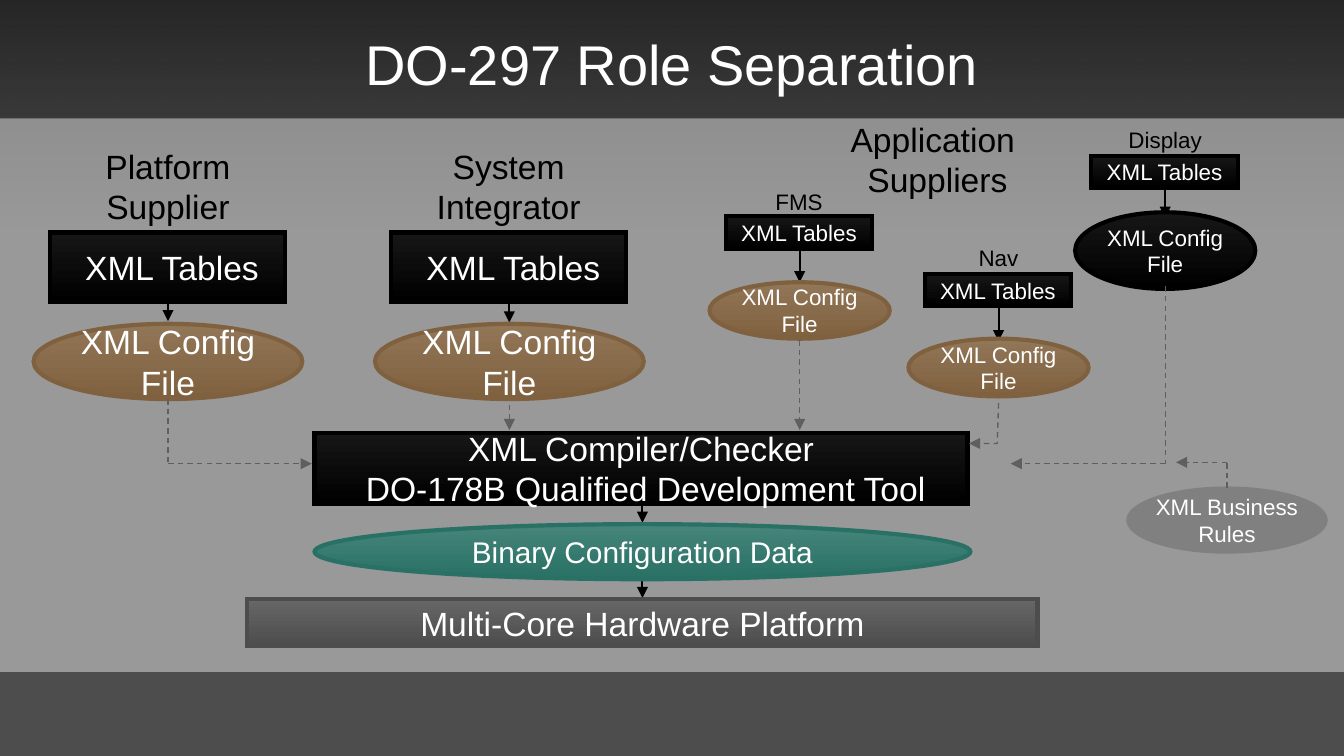
"""Build the DO-297 role separation slide."""
from lxml import etree
from pptx import Presentation
from pptx.dml.color import RGBColor
from pptx.enum.dml import MSO_LINE
from pptx.enum.shapes import MSO_CONNECTOR, MSO_SHAPE
from pptx.enum.text import MSO_ANCHOR, PP_ALIGN
from pptx.oxml.ns import qn
from pptx.util import Inches, Pt

RECT, OVAL = MSO_SHAPE.RECTANGLE, MSO_SHAPE.OVAL
STRAIGHT, DASH = MSO_CONNECTOR.STRAIGHT, MSO_LINE.DASH
MIDDLE, CENTER = MSO_ANCHOR.MIDDLE, PP_ALIGN.CENTER
hex_color = RGBColor.from_string

BLACK = ("161616", "000000")
BROWN = ("917657", "80613F")
GREEN = ("46857B", "297065")
GRAY = ("666666", "4D4D4D")


def write(shape, text, size, color, insets=(0, 0), wrap=True):
    """Put centred text in a shape."""
    frame = shape.text_frame
    frame.text = text
    frame.word_wrap = wrap
    frame.vertical_anchor = MIDDLE
    frame.margin_left = frame.margin_right = Inches(insets[0])
    frame.margin_top = frame.margin_bottom = Inches(insets[1])
    for para in frame.paragraphs:
        para.alignment = CENTER
        para.font.size = Pt(size)
        para.font.name = "Arial"
        para.font.color.rgb = hex_color(color)


def style_line(shape, dashed, arrow=True):
    """Format a flow line, dashed gray or solid black."""
    line = shape.line
    line.color.rgb = hex_color("5F5F5F" if dashed else "000000")
    line.width = Pt(0.75 if dashed else 1)
    if dashed:
        line.dash_style = DASH
    properties = shape._element.spPr
    if arrow:
        etree.SubElement(properties.find(qn("a:ln")), qn("a:tailEnd"), type="triangle")
    if properties.find(qn("a:effectLst")) is None:
        etree.SubElement(properties, qn("a:effectLst"))


deck = Presentation()
deck.slide_width = Inches(10)
deck.slide_height = deck.slide_width * 9 // 16
page = deck.slides.add_slide(deck.slide_layouts[5])
shapes = page.shapes
page.background.fill.solid()
page.background.fill.fore_color.rgb = hex_color("4D4D4D")

banner = shapes.add_shape(RECT, 0, 0, Inches(10), Inches(1.74))
banner.fill.gradient()
banner.fill.gradient_angle = 90
for stop in banner.fill.gradient_stops:
    stop.color.rgb = hex_color("262626")
panel = shapes.add_shape(RECT, 0, Inches(0.88), Inches(10), Inches(4.12))
panel.fill.solid()
panel.fill.fore_color.rgb = hex_color("E6E6E6")
for shape, opacity in ((banner, "0"), (panel, "50000")):
    shape.shadow.inherit = False
    shape.line.fill.background()
    color = next(shape._element.spPr.iter(qn("a:srgbClr")))
    etree.SubElement(color, qn("a:alpha"), val=opacity)

title = shapes.title
title.left, title.top, title.width, title.height = map(Inches, (0.5, 0.24, 9, 0.53))
write(title, "DO-297 Role Separation", 30, "FFFFFF", (0.1, 0.05))
title.text_frame.paragraphs[0].line_spacing = 0.85
panel._element.addnext(title._element)

for x, top, bottom in (
    (1.25, 2.24, 2.39), (3.79, 2.24, 2.4), (5.95, 1.85, 2.1), (7.43, 2.28, 2.54),
    (8.67, 1.37, 1.62), (4.78, 3.76, 3.89), (4.78, 4.32, 4.45),
):
    arrow = shapes.add_connector(STRAIGHT, *map(Inches, (x, top, x, bottom)))
    style_line(arrow, dashed=False)

boxes = [
    (RECT, (1.84, 4.46, 5.88, 0.35), GRAY, "Multi-Core Hardware Platform", 18, (0.1, 0.05), True),
    (RECT, (2.34, 3.22, 4.86, 0.53), BLACK,
     "XML Compiler/Checker\v DO-178B Qualified Development Tool", 18, (0.1, 0.05), False),
    (OVAL, (2.34, 3.9, 4.88, 0.41), GREEN, "Binary Configuration Data", 16, (0, 0), True),
]
for center in (1.25, 3.79):
    boxes += [
        (RECT, (center - 0.88, 1.73, 1.75, 0.52), BLACK, " XML Tables", 18, (0.1, 0.05), False),
        (OVAL, (center - 1, 2.41, 2, 0.56), BROWN, "XML Config\vFile", 18, (0, 0), True),
    ]
for center, table_top, file_top, file_height, colors in (
    (5.95, 1.61, 2.1, 0.42, BROWN), (7.43, 2.04, 2.52, 0.43, BROWN), (8.67, 1.16, 1.58, 0.57, BLACK),
):
    boxes += [
        (RECT, (center - 0.55, table_top, 1.09, 0.24), BLACK, "XML Tables", 12, (0, 0.02), True),
        (OVAL, (center - 0.67, file_top, 1.34, file_height), colors, "XML Config File", 12, (0, 0), True),
    ]
for kind, place, colors, text, size, insets, wrap in boxes:
    box = shapes.add_shape(kind, *map(Inches, place))
    box.shadow.inherit = False
    box.fill.gradient()
    box.fill.gradient_angle = 270
    for stop, color in zip(box.fill.gradient_stops, colors):
        stop.color.rgb = hex_color(color)
    box.line.color.rgb = hex_color(colors[1])
    box.line.width = Pt(2.25)
    etree.SubElement(box._element.spPr.find(qn("a:ln")), qn("a:miter"), lim="800000")
    write(box, text, size, "FFFFFF", insets, wrap)

rules = shapes.add_shape(OVAL, *map(Inches, (8.38, 3.62, 1.5, 0.5)))
rules.shadow.inherit = False
rules.fill.solid()
rules.fill.fore_color.rgb = hex_color("808080")
rules.line.fill.background()
write(rules, "XML Business Rules", 12, "FFFFFF")

for text, place, size in (
    ("Platform\vSupplier", (0.78, 1.08, 0.94, 0.61), 18),
    ("System Integrator", (3, 1.08, 1.57, 0.61), 18),
    ("Application \vSuppliers", (6.13, 0.88, 1.69, 0.61), 18),
    ("FMS", (5.57, 1.4, 0.75, 0.2), 12),
    ("Nav", (6.76, 1.82, 1.34, 0.2), 12),
    ("Display", (8.17, 0.94, 1, 0.2), 12),
):
    write(shapes.add_textbox(*map(Inches, place)), text, size, "000000")

for route in (
    ((1.25, 2.97), (1.25, 3.45), (2.32, 3.45)),
    ((3.79, 3.01), (3.79, 3.2)),
    ((5.95, 2.53), (5.95, 3.2)),
    ((8.67, 2.13), (8.67, 3.45), (7.52, 3.45)),
    ((9.13, 3.63), (9.13, 3.44), (8.75, 3.44)),
):
    for start, end in zip(route, route[1:]):
        leg = shapes.add_connector(STRAIGHT, *map(Inches, start + end))
        style_line(leg, dashed=True, arrow=end == route[-1])

builder = shapes.build_freeform(Inches(7.43), Inches(3))
builder.add_line_segments([(Inches(7.42), Inches(3.3)), (Inches(7.21), Inches(3.3))], close=False)
nav_route = builder.convert_to_shape()
nav_route.fill.background()
style_line(nav_route, dashed=True)

deck.save("out.pptx")
